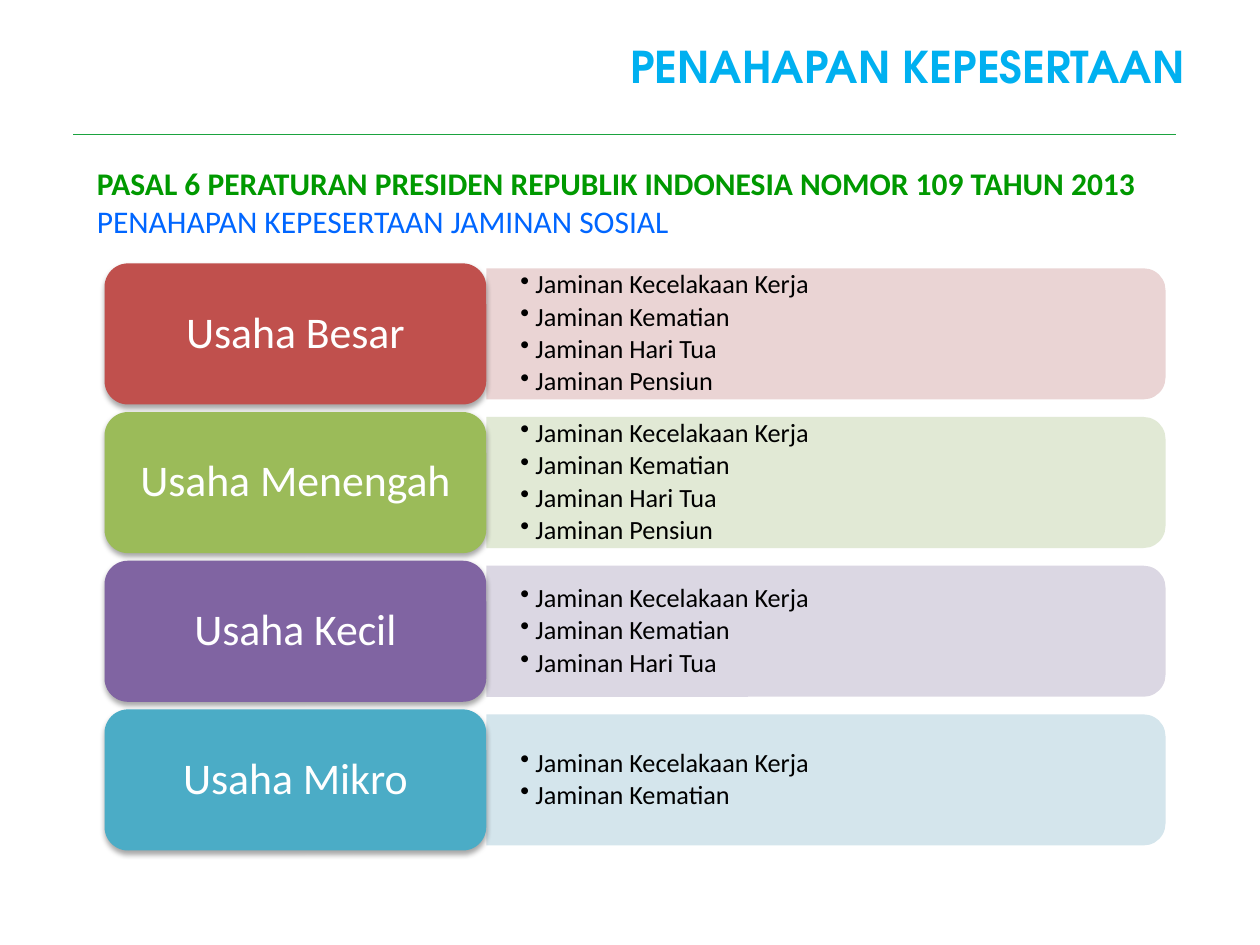
from dataclasses import dataclass

from lxml.etree import SubElement
from pptx import Presentation
from pptx.dml.color import RGBColor
from pptx.enum.shapes import MSO_CONNECTOR, MSO_SHAPE
from pptx.enum.text import MSO_ANCHOR, PP_ALIGN
from pptx.oxml.ns import qn
from pptx.util import Inches, Pt


@dataclass(frozen=True)
class Theme:
    body_font: str = "Calibri"
    title_font: str = "TeX Gyre Adventor"
    title_size: float = 25
    heading_size: float = 18
    label_size: float = 25
    benefit_size: float = 15
    title: str = "00B0F0"
    rule: str = "1BA33F"
    article: str = "009900"
    subject: str = "0066FF"
    label: str = "FFFFFF"
    benefit: str = "000000"
    shadow: str = "000000"


@dataclass(frozen=True)
class Stage:
    business: str
    color: str
    tint: str
    benefit_count: int


THEME = Theme()
BENEFITS = ["Jaminan Kecelakaan Kerja", "Jaminan Kematian",
            "Jaminan Hari Tua", "Jaminan Pensiun"]
STAGES = [
    Stage("Usaha Besar", "C0504D", "E8D0D0", 4),
    Stage("Usaha Menengah", "9BBB59", "DEE7D1", 4),
    Stage("Usaha Kecil", "8064A2", "D8D3E0", 3),
    Stage("Usaha Mikro", "4BACC6", "D0E3EA", 2),
]

# Stage grid, in inches
FIRST_TOP, STAGE_PITCH = 2.09, 1.18
LABEL_LEFT, LABEL_WIDTH, LABEL_HEIGHT = 0.83, 3.03, 1.12
PANEL_LEFT, PANEL_WIDTH, PANEL_HEIGHT = LABEL_LEFT + LABEL_WIDTH, 5.39, 1.04
BENEFIT_WIDTH, BENEFIT_HEIGHT = 5.34, 0.94


def apply(target, values: dict) -> None:
    for name, value in values.items():
        setattr(target, name, value)


def set_frame(frame, anchor=MSO_ANCHOR.TOP, side: float = 0.1, edge: float = 0.05) -> None:
    apply(frame, {
        "word_wrap": True, "vertical_anchor": anchor,
        "margin_left": Inches(side), "margin_right": Inches(side),
        "margin_top": Inches(edge), "margin_bottom": Inches(edge),
    })


def add_run(paragraph, text: str, size: float, color: str,
            bold: bool = False, font: str = THEME.body_font) -> None:
    run = paragraph.add_run()
    run.text = text
    apply(run.font, {"name": font, "size": Pt(size), "bold": bold})
    run.font.color.rgb = RGBColor.from_string(color)


def add_text_box(slide, left: float, top: float, width: float, height: float):
    box = slide.shapes.add_textbox(Inches(left), Inches(top), Inches(width), Inches(height))
    return box.text_frame


def add_filled(slide, kind, left: float, top: float, width: float, height: float, color: str):
    shape = slide.shapes.add_shape(kind, Inches(left), Inches(top), Inches(width), Inches(height))
    shape.shadow.inherit = False
    shape.fill.solid()
    shape.fill.fore_color.rgb = RGBColor.from_string(color)
    shape.line.fill.background()
    return shape


def add_alpha(color_element, percent: int) -> None:
    SubElement(color_element, qn("a:alpha"), val=str(percent * 1000))


def add_drop_shadow(shape) -> None:
    effects = shape._element.spPr.find(qn("a:effectLst"))
    shadow = SubElement(effects, qn("a:outerShdw"), blurRad=str(Pt(3.1)),
                        dist=str(Pt(1.8)), dir="5400000", rotWithShape="0")
    add_alpha(SubElement(shadow, qn("a:srgbClr"), val=THEME.shadow), 35)


def add_bullet(paragraph, indent: float) -> None:
    properties = paragraph._p.get_or_add_pPr()
    properties.set("marL", str(Inches(indent)))
    properties.set("indent", str(Inches(-indent)))
    SubElement(properties, qn("a:buChar"), char="•")


def add_stage(slide, stage: Stage, top: float) -> None:
    middle = top + LABEL_HEIGHT / 2

    # Tinted panel: an upright shape turned a quarter so its round corners face right
    panel = add_filled(slide, MSO_SHAPE.ROUND_2_SAME_RECTANGLE,
                       PANEL_LEFT + (PANEL_WIDTH - PANEL_HEIGHT) / 2,
                       middle - PANEL_WIDTH / 2,
                       PANEL_HEIGHT, PANEL_WIDTH, stage.tint)
    panel.rotation = 90
    add_alpha(panel._element.spPr.find(qn("a:solidFill"))[0], 90)

    # Benefits
    benefits = add_text_box(slide, PANEL_LEFT, middle - BENEFIT_HEIGHT / 2,
                            BENEFIT_WIDTH, BENEFIT_HEIGHT)
    set_frame(benefits, MSO_ANCHOR.MIDDLE, side=0.27, edge=0.14)
    for index, benefit in enumerate(BENEFITS[:stage.benefit_count]):
        paragraph = benefits.add_paragraph() if index else benefits.paragraphs[0]
        add_bullet(paragraph, 0.12)
        apply(paragraph, {"level": 1, "line_spacing": 0.9,
                          "space_after": Pt(0.15 * THEME.benefit_size)})
        add_run(paragraph, benefit, THEME.benefit_size, THEME.benefit)

    # Business size
    label = add_filled(slide, MSO_SHAPE.ROUNDED_RECTANGLE, LABEL_LEFT, top,
                       LABEL_WIDTH, LABEL_HEIGHT, stage.color)
    add_drop_shadow(label)
    set_frame(label.text_frame, MSO_ANCHOR.MIDDLE)
    paragraph = label.text_frame.paragraphs[0]
    apply(paragraph, {"alignment": PP_ALIGN.CENTER, "line_spacing": 0.9})
    add_run(paragraph, stage.business, THEME.label_size, THEME.label)


def add_header(slide) -> None:
    # Rule under the title
    rule = slide.shapes.add_connector(MSO_CONNECTOR.STRAIGHT, Inches(0.58), Inches(1.07),
                                      Inches(9.33), Inches(1.07))
    rule.line.width = Pt(0.75)
    rule.line.color.rgb = RGBColor.from_string(THEME.rule)
    SubElement(rule._element.spPr, qn("a:effectLst"))

    # Title
    title = add_text_box(slide, 2.72, 0.14, 6.78, 0.77)
    set_frame(title, MSO_ANCHOR.MIDDLE)
    title.paragraphs[0].alignment = PP_ALIGN.RIGHT
    add_run(title.paragraphs[0], "PENAHAPAN KEPESERTAAN", THEME.title_size,
            THEME.title, True, THEME.title_font)

    # Legal basis
    basis = add_text_box(slide, 0.67, 1.25, 8.58, 0.71)
    set_frame(basis)
    add_run(basis.paragraphs[0],
            "PASAL 6 PERATURAN PRESIDEN REPUBLIK INDONESIA NOMOR 109 TAHUN 2013",
            THEME.heading_size, THEME.article, True)
    add_run(basis.add_paragraph(), "PENAHAPAN KEPESERTAAN JAMINAN SOSIAL",
            THEME.heading_size, THEME.subject)


def main() -> None:
    deck = Presentation()
    apply(deck, {"slide_width": Inches(10), "slide_height": Inches(7.5)})
    slide = deck.slides.add_slide(deck.slide_layouts[6])
    add_header(slide)
    for row, stage in enumerate(STAGES):
        add_stage(slide, stage, FIRST_TOP + row * STAGE_PITCH)
    deck.save("out.pptx")


if __name__ == "__main__":
    main()
